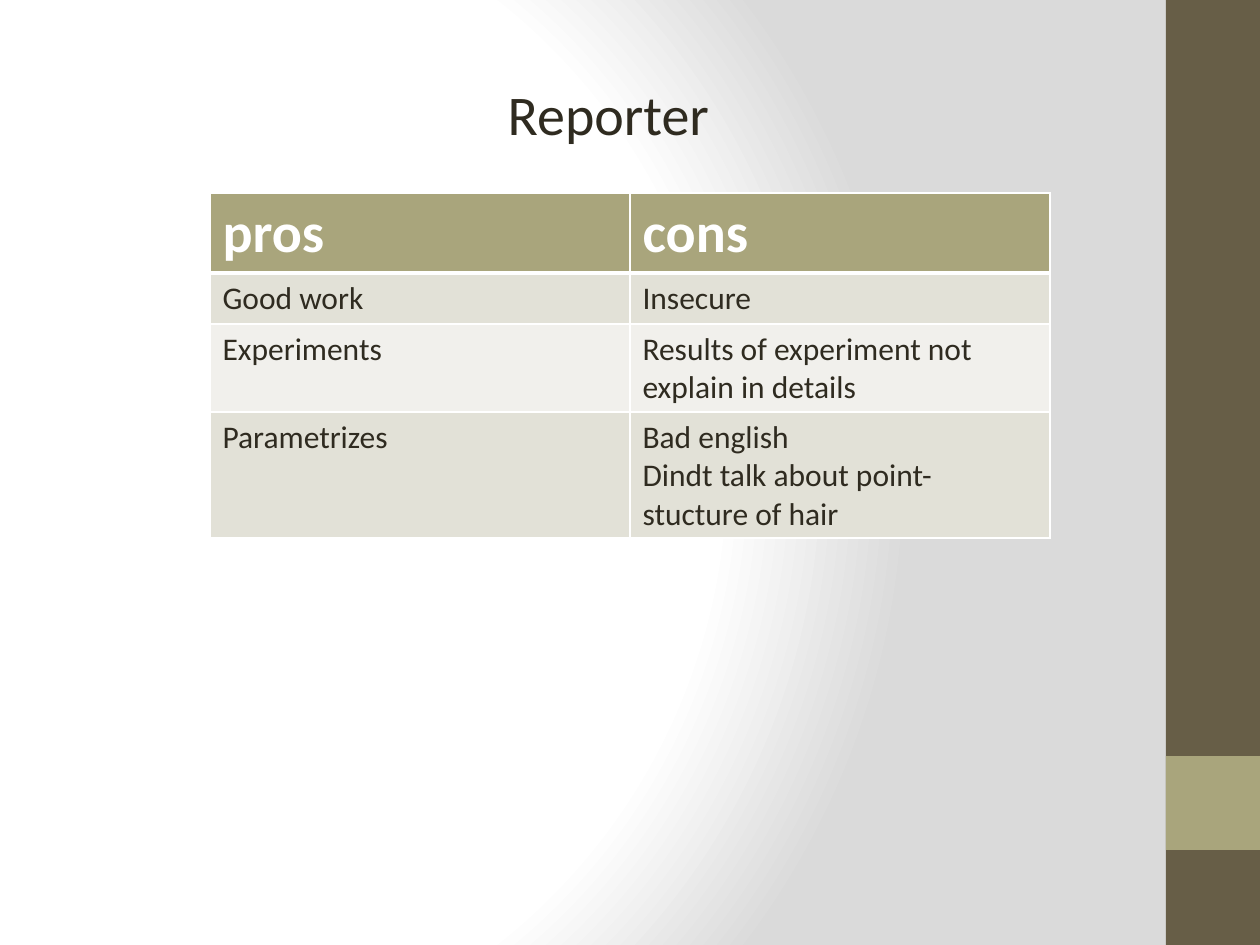
from lxml import etree
from pptx import Presentation
from pptx import util as u
from pptx.dml.color import RGBColor
from pptx.enum import shapes, text
from pptx.oxml import parse_xml
from pptx.oxml.ns import qn

PX = 914400 / 126
INK, OLIVE, BROWN, WHITE = "2F2B20", "A9A57C", "675E47", "FFFFFF"
BANDS = ["E2E1D7", "F1F0EC"]
ROWS = [
    ["pros", "cons"],
    ["Good work", "Insecure"],
    ["Experiments", "Results of experiment not explain in details"],
    ["Parametrizes", "Bad english\nDindt talk about point-stucture of hair"],
]


def px(*lengths):
    return [u.Emu(round(length * PX)) for length in lengths]


def color(value):
    return RGBColor.from_string(value)


deck = Presentation()
deck.slide_width, deck.slide_height = px(1260, 945)
page = deck.slides.add_slide(deck.slide_layouts[5])

page.background.fill.solid()
background = page._element.cSld.bg.bgPr
stops = "".join(
    f'<a:gs pos="{place * 1000}"><a:srgbClr val="{value}"/></a:gs>'
    for place, value in [(0, WHITE), (75, WHITE), (100, "DADADA")]
)
gradient = parse_xml(
    '<a:gradFill xmlns:a="http://schemas.openxmlformats.org/drawingml/2006/main" rotWithShape="1">'
    f'<a:gsLst>{stops}</a:gsLst><a:path path="circle">'
    '<a:fillToRect l="20000" t="50000" r="100000" b="50000"/></a:path></a:gradFill>'
)
background.replace(background[0], gradient)

for top, height, fill in [(0, 945, BROWN), (756, 94, OLIVE)]:
    band = page.shapes.add_shape(shapes.MSO_SHAPE.RECTANGLE, *px(1166, top, 94, height))
    band.shadow.inherit = False
    band.fill.solid()
    band.fill.fore_color.rgb = color(fill)
    band.line.fill.background()

frame = page.shapes.add_table(4, 2, *px(210, 193, 840, 345))
table = frame.table
for r, words in enumerate(ROWS):
    table.rows[r].height = px(51)[0]
    header = r == 0
    for c, wording in enumerate(words):
        cell = table.cell(r, c)
        cell.text = wording
        for para in cell.text_frame.paragraphs:
            para.font.name = "Calibri"
            para.font.size = u.Pt(32 if header else 18)
            para.font.bold = header
            para.font.color.rgb = color(WHITE if header else INK)
        properties = cell._tc.get_or_add_tcPr()
        for side in "LRTB":
            thick = (header and side == "B") or (r == 1 and side == "T")
            border = etree.SubElement(properties, qn(f"a:ln{side}"), w=str(u.Pt(3 if thick else 1)))
            paint = etree.SubElement(border, qn("a:solidFill"))
            etree.SubElement(paint, qn("a:srgbClr"), val=WHITE)
        cell.fill.solid()
        cell.fill.fore_color.rgb = color(OLIVE if header else BANDS[(r - 1) % 2])
frame.height = px(345)[0]

title = page.shapes.title
title.left, title.top, title.width, title.height = px(136, 73, 945, 81)
title.text_frame.text = "Reporter"
title.text_frame.word_wrap = True
title.text_frame.auto_size = text.MSO_AUTO_SIZE.SHAPE_TO_FIT_TEXT
title.text_frame.vertical_anchor = text.MSO_ANCHOR.TOP
para = title.text_frame.paragraphs[0]
para.alignment = text.PP_ALIGN.CENTER
para.font.name = "Calibri"
para.font.size = u.Pt(32)
para.font.color.rgb = color(INK)

deck.save("out.pptx")
